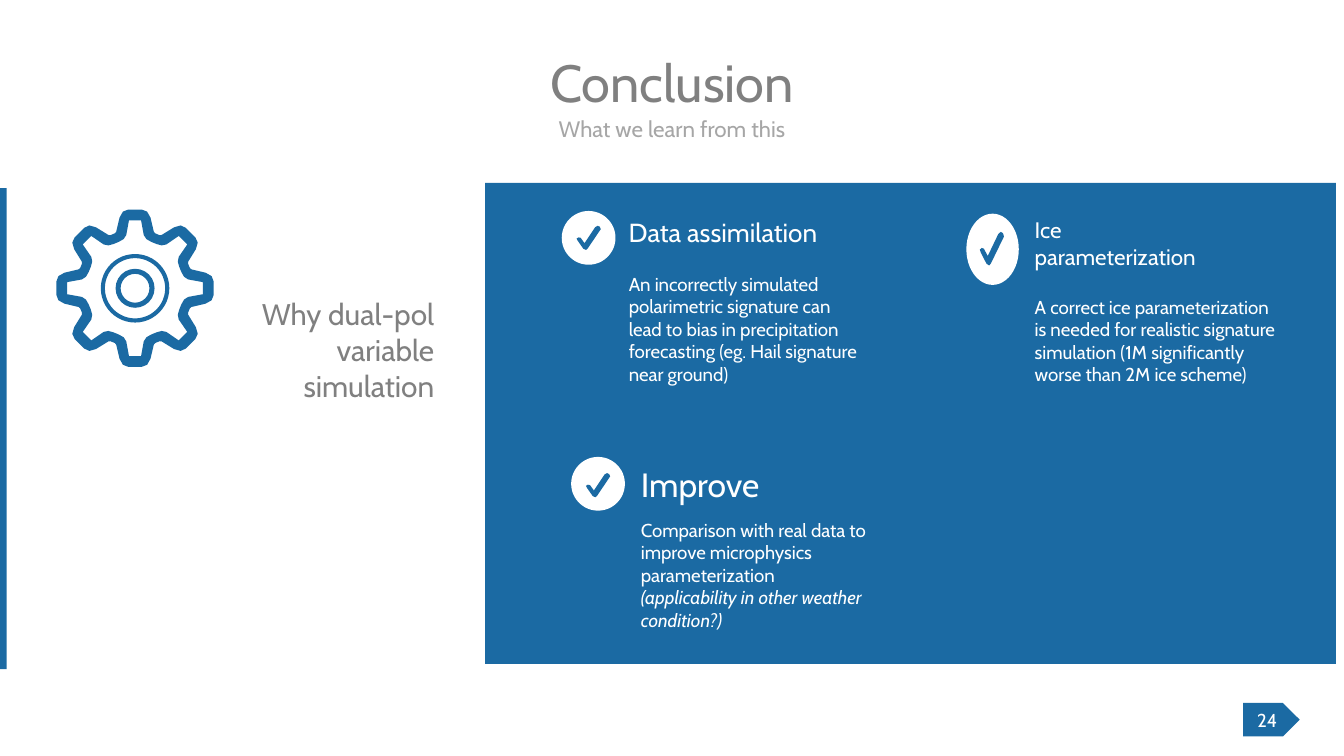
from dataclasses import dataclass
from math import cos, pi, sin
from typing import NamedTuple

from pptx import Presentation
from pptx.dml.color import RGBColor
from pptx.enum.shapes import MSO_SHAPE
from pptx.enum.text import MSO_ANCHOR, PP_ALIGN
from pptx.shapes.autoshape import Shape
from pptx.slide import Slide
from pptx.util import Inches, Pt

CELL = Inches(0.1)
COLUMNS, ROWS = 100, 56.25
FONT = "Cabin"
COLORS = {
    "blue": "1B6AA3",
    "white": "FFFFFF",
    "gray": "808080",
    "light gray": "A6A6A6",
}
TEETH = 8
OUTER_TOOTH = [(0.5, 5.85), (0.9, 5.7), (1.15, 5.25), (1.4, 4.2), (1.5, 4.08)]
INNER_TOOTH = [(0.45, 5.05), (0.65, 3.95), (0.85, 3.65), (1.2, 3.45)]
CHECK_MARK = [
    (0.39, 1), (0.28, 0.95), (0.04, 0.61), (0, 0.53), (0.08, 0.48), (0.17, 0.5),
    (0.33, 0.72), (0.77, 0.06), (0.87, 0), (0.96, 0.04), (1, 0.14), (0.46, 0.94),
]

Points = list[tuple[float, float]]


class Area(NamedTuple):
    column: float
    row: float
    columns: float
    rows: float

    def lengths(self) -> list[int]:
        return [round(value * CELL) for value in self]


@dataclass
class Label:
    area: Area
    lines: list[str]
    size: int
    color: str = "white"
    align: PP_ALIGN = PP_ALIGN.LEFT
    anchor: MSO_ANCHOR = MSO_ANCHOR.TOP
    italic_line: int = -1


@dataclass
class Finding:
    heading: Label
    body: Label
    badge: Area
    check: Area


def paint(shape: Shape, color: str) -> None:
    shape.fill.solid()
    shape.fill.fore_color.rgb = RGBColor.from_string(COLORS[color])
    shape.line.fill.background()
    shape.shadow.inherit = False


def write(shape: Shape, label: Label) -> None:
    frame = shape.text_frame
    frame.word_wrap = True
    frame.vertical_anchor = label.anchor
    for index, line in enumerate(label.lines):
        paragraph = frame.paragraphs[0] if index == 0 else frame.add_paragraph()
        paragraph.text = line
        paragraph.alignment = label.align
        paragraph.font.name = FONT
        paragraph.font.size = Pt(label.size)
        paragraph.font.italic = index == label.italic_line
        paragraph.font.color.rgb = RGBColor.from_string(COLORS[label.color])


def add_label(slide: Slide, label: Label) -> None:
    write(slide.shapes.add_textbox(*label.area.lengths()), label)


def add_preset(slide: Slide, preset: MSO_SHAPE, area: Area, color: str) -> Shape:
    shape = slide.shapes.add_shape(preset, *area.lengths())
    paint(shape, color)
    return shape


def add_outline(slide: Slide, contours: list[Points], color: str) -> None:
    scaled = [[(x * CELL, y * CELL) for x, y in points] for points in contours]
    builder = slide.shapes.build_freeform(*scaled[0][0])
    builder.add_line_segments(scaled[0][1:], close=True)
    for points in scaled[1:]:
        builder.move_to(*points[0])
        builder.add_line_segments(points[1:], close=True)
    paint(builder.convert_to_shape(), color)


def gear_contour(center: tuple[float, float], half_tooth: Points) -> Points:
    tooth = [(-x, y) for x, y in reversed(half_tooth)] + half_tooth
    angles = [2 * pi * index / TEETH for index in range(TEETH)]
    return [
        (
            center[0] + x * cos(angle) + y * sin(angle),
            center[1] + x * sin(angle) - y * cos(angle),
        )
        for angle in angles
        for x, y in tooth
    ]


def add_gear(slide: Slide, center: tuple[float, float]) -> None:
    contours = [gear_contour(center, half) for half in (OUTER_TOOTH, INNER_TOOTH)]
    add_outline(slide, contours, "blue")
    for diameter, thickness in ((5.1, 0.06), (2.9, 0.13)):
        corner = [middle - diameter / 2 for middle in center]
        ring = add_preset(slide, MSO_SHAPE.DONUT, Area(*corner, diameter, diameter), "blue")
        ring.adjustments[0] = thickness


def add_finding(slide: Slide, finding: Finding) -> None:
    add_label(slide, finding.body)
    add_label(slide, finding.heading)
    add_preset(slide, MSO_SHAPE.OVAL, finding.badge, "white")
    left, top, width, height = finding.check
    mark = [(left + x * width, top + y * height) for x, y in CHECK_MARK]
    add_outline(slide, [mark], "blue")


LABELS = [
    Label(Area(5, 4.1, 90, 4), ["Conclusion"], 28, "gray", PP_ALIGN.CENTER, MSO_ANCHOR.MIDDLE),
    Label(Area(5, 8.1, 90, 3.3), ["What we learn from this"], 12, "light gray", PP_ALIGN.CENTER),
    Label(Area(15, 21.5, 18.3, 9.1), ["Why dual-pol variable simulation"], 16, "gray", PP_ALIGN.RIGHT),
]
FINDINGS = [
    Finding(
        Label(Area(46.7, 34, 15, 4), ["Improve"], 18),
        Label(
            Area(46.7, 38.1, 19.2, 9.4),
            [
                "Comparison with real data to improve microphysics parameterization",
                "(applicability in other weather condition?)",
            ],
            10,
            italic_line=1,
        ),
        Area(42.5, 34, 4, 4),
        Area(43.6, 35.2, 1.8, 1.8),
    ),
    Finding(
        Label(Area(76, 15.6, 15.5, 7.1), ["Ice parameterization"], 12),
        Label(
            Area(76, 21.5, 19.9, 9.4),
            [
                "A correct ice parameterization is needed for realistic signature "
                "simulation (1M significantly worse than 2M ice scheme)"
            ],
            10,
        ),
        Area(71.9, 15.9, 3.9, 5.3),
        Area(72.9, 17.25, 1.8, 2.5),
    ),
    Finding(
        Label(Area(45.8, 15.6, 17.4, 3.4), ["Data assimilation"], 14),
        Label(
            Area(45.8, 19.8, 19.2, 9.4),
            [
                "An incorrectly simulated polarimetric signature can lead to bias in "
                "precipitation forecasting (eg. Hail signature near ground)"
            ],
            10,
        ),
        Area(41.8, 15.7, 4, 4),
        Area(42.9, 16.8, 1.8, 1.8),
    ),
]
PAGE_NUMBER = Label(
    Area(92.5, 52.3, 4.2, 2.5), ["24"], 10, "white", PP_ALIGN.CENTER, MSO_ANCHOR.MIDDLE
)


def main() -> None:
    presentation = Presentation()
    presentation.slide_width = COLUMNS * CELL
    presentation.slide_height = round(ROWS * CELL)
    slide = presentation.slides.add_slide(presentation.slide_layouts[6])

    add_preset(slide, MSO_SHAPE.RECTANGLE, Area(36.1, 13.6, 63.3, 35.8), "blue")
    add_preset(slide, MSO_SHAPE.RECTANGLE, Area(0, 14, 0.5, 35.8), "blue")
    for label in LABELS:
        add_label(slide, label)
    add_gear(slide, (10.05, 21.45))
    for finding in FINDINGS:
        add_finding(slide, finding)
    page_tag = add_preset(slide, MSO_SHAPE.PENTAGON, PAGE_NUMBER.area, "blue")
    page_tag.text_frame.margin_left = page_tag.text_frame.margin_right = 0
    write(page_tag, PAGE_NUMBER)

    presentation.save("out.pptx")


if __name__ == "__main__":
    main()
